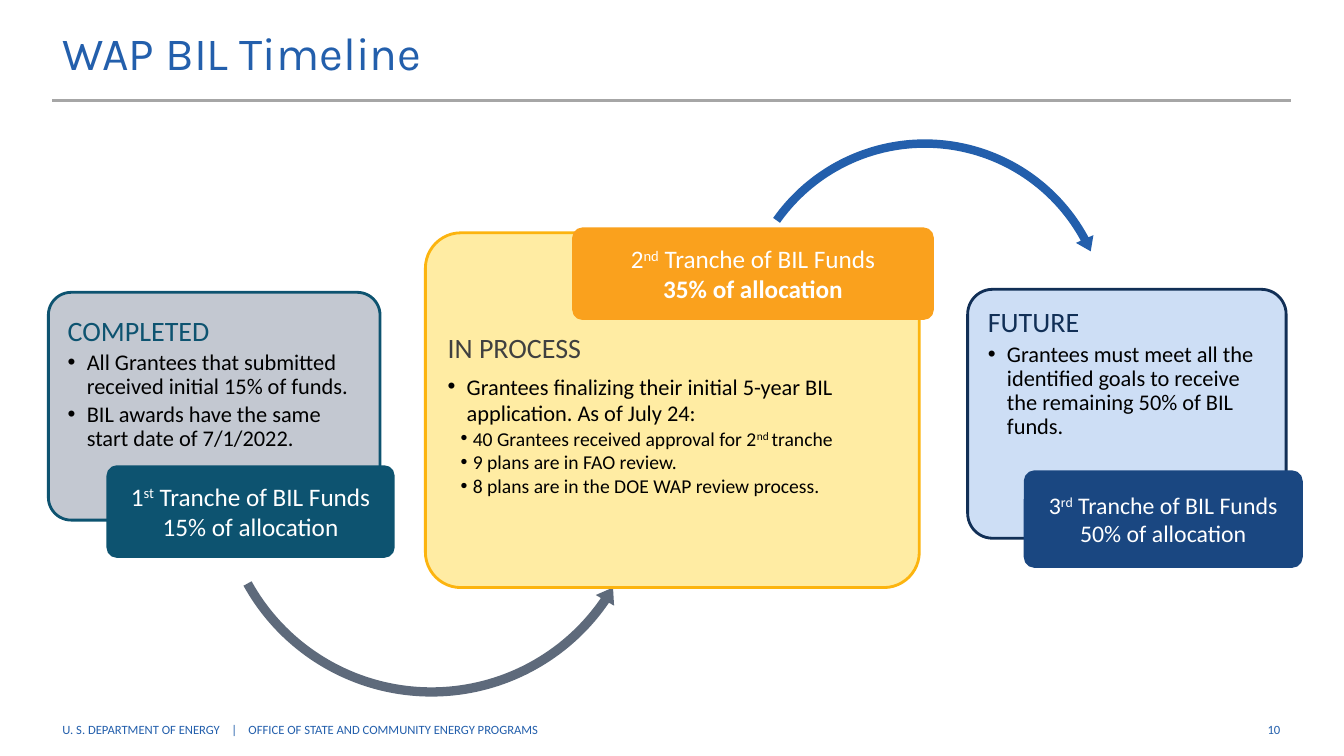
from dataclasses import dataclass

from lxml.etree import SubElement
from pptx import Presentation
from pptx.dml.color import RGBColor
from pptx.enum.shapes import MSO_CONNECTOR as Connector, MSO_SHAPE as Shape
from pptx.enum.text import MSO_ANCHOR as Anchor, PP_ALIGN as Align
from pptx.oxml.ns import qn
from pptx.util import Inches, Pt

WIDTH, HEIGHT = Inches(13.33), Inches(7.5)


@dataclass(frozen=True)
class Theme:
    title_font: str = "Karla"
    body_font: str = "Calibri"
    title_size: float = 33
    heading_size: float = 20
    body_size: float = 16
    detail_size: float = 14
    badge_size: float = 18
    small_badge_size: float = 17
    footer_size: float = 9
    blue: str = "235FAC"
    rule: str = "A6A6A6"
    slate: str = "5E6A7B"
    teal: str = "0D5370"
    silver: str = "BDC3CC"
    cream: str = "FFEA99"
    gold: str = "FCB40F"
    orange: str = "FAA11D"
    sky: str = "CDDEF5"
    navy: str = "112F56"
    royal: str = "1A4781"
    charcoal: str = "404040"
    black: str = "000000"
    white: str = "FFFFFF"


THEME = Theme()

STAGES = [
    dict(
        card=(3.6, 38.67, 24.68, 30.13), fill=THEME.silver, edge=THEME.teal, alpha=90,
        body=(3.98, 39.33, 23.85, 22.27), anchor=Anchor.BOTTOM, spacing=0.9,
        heading="COMPLETED", heading_color=THEME.teal, heading_after=3,
        bullets=["All Grantees that submitted received initial 15% of funds.",
                 "BIL awards have the same start date of 7/1/2022."],
        bullet_after=2.4, details=[],
        arrow=(Shape.LEFT_CIRCULAR_ARROW, (15.68, 34.53, 32.85, 58.4), THEME.slate,
               (0.021, 2.477, 20.613, 90.626, 0.024)),
        badge=(8.03, 61.73, 21.23, 11.87), badge_color=THEME.teal,
        tranche="1^st^ Tranche of BIL Funds", share="15% of allocation",
        badge_size=THEME.badge_size, bold_share=False,
    ),
    dict(
        card=(31.65, 30.8, 36.75, 46.93), fill=THEME.cream, edge=THEME.gold, alpha=90,
        body=(32.25, 41.87, 35.55, 34.67), anchor=Anchor.TOP, spacing=1.0,
        heading="IN PROCESS", heading_color=THEME.charcoal, heading_after=6,
        bullets=["Grantees finalizing their initial 5-year BIL application. As of July 24:"],
        bullet_after=0,
        details=["40 Grantees received approval for 2^nd ^tranche",
                 "9 plans are in FAO review.",
                 "8 plans are in the DOE WAP review process."],
        arrow=(Shape.CIRCULAR_ARROW, (54.6, 17.73, 28.43, 50.53), THEME.blue,
               (0.022, 2.602, 199.025, 129.137, 0.025)),
        badge=(42.68, 30.27, 26.7, 11.87), badge_color=THEME.orange,
        tranche="2^nd^ Tranche of BIL Funds", share="35% of allocation",
        badge_size=THEME.badge_size, bold_share=True,
    ),
    dict(
        card=(72, 38.27, 23.7, 32.93), fill=THEME.sky, edge=THEME.navy, alpha=100,
        body=(72.45, 38.93, 22.8, 24.4), anchor=Anchor.TOP, spacing=0.9,
        heading="FUTURE", heading_color=THEME.navy, heading_after=3,
        bullets=["Grantees must meet all the identified goals to receive "
                 "the remaining 50% of BIL funds."],
        bullet_after=2.4, details=[], arrow=None,
        badge=(76.28, 62.4, 20.55, 12.53), badge_color=THEME.royal,
        tranche="3^rd^ Tranche of BIL Funds", share="50% of allocation",
        badge_size=THEME.small_badge_size, bold_share=False,
    ),
]


def across(percent):
    return round(WIDTH * percent / 100)


def down(percent):
    return round(HEIGHT * percent / 100)


def place(area):
    left, top, width, height = area
    return across(left), down(top), across(width), down(height)


def write(paragraph, text, size, color, font=THEME.body_font, bold=False, align=None,
          spacing=None, after=0, bullet=None):
    paragraph.space_after = Pt(after)
    if align is not None:
        paragraph.alignment = align
    if spacing is not None:
        paragraph.line_spacing = spacing
    if bullet:
        indent, hang = bullet
        properties = paragraph._p.get_or_add_pPr()
        properties.set("marL", str(Inches(indent)))
        properties.set("indent", str(-Inches(hang)))
        SubElement(properties, qn("a:buFont")).set("typeface", "Arial")
        SubElement(properties, qn("a:buChar")).set("char", "•")
    for index, piece in enumerate(text.split("^")):
        run = paragraph.add_run()
        run.text = piece
        run.font.name, run.font.size, run.font.bold = font, Pt(size), bold
        run.font.color.rgb = RGBColor.from_string(color)
        if index % 2:
            run._r.get_or_add_rPr().set("baseline", "30000")


def set_frame(shape, anchor, inset_x=0.1, inset_y=0.05):
    frame = shape.text_frame
    frame.word_wrap = True
    frame.vertical_anchor = anchor
    frame.margin_left = frame.margin_right = Inches(inset_x)
    frame.margin_top = frame.margin_bottom = Inches(inset_y)
    return frame


def add_panel(slide, kind, area, fill, edge=None, alpha=100, adjustments=(0.1,)):
    panel = slide.shapes.add_shape(kind, *place(area))
    panel.shadow.inherit = False
    for index, value in enumerate(adjustments):
        panel.adjustments[index] = value
    panel.fill.solid()
    panel.fill.fore_color.rgb = RGBColor.from_string(fill)
    if alpha < 100:
        color = panel.fill._xPr.find(qn("a:solidFill"))[0]
        SubElement(color, qn("a:alpha")).set("val", str(alpha * 1000))
    if edge:
        panel.line.color.rgb = RGBColor.from_string(edge)
        panel.line.width = Pt(2)
    else:
        panel.line.fill.background()
    return panel


def add_body(slide, stage):
    frame = set_frame(slide.shapes.add_textbox(*place(stage["body"])),
                      stage["anchor"], 0.14, 0.14)
    spacing = stage["spacing"]
    write(frame.paragraphs[0], stage["heading"], THEME.heading_size,
          stage["heading_color"], spacing=spacing, after=stage["heading_after"])
    for bullet in stage["bullets"]:
        write(frame.add_paragraph(), bullet, THEME.body_size, THEME.black,
              spacing=spacing, after=stage["bullet_after"], bullet=(0.19, 0.19))
    for detail in stage["details"]:
        write(frame.add_paragraph(), detail, THEME.detail_size, THEME.black,
              spacing=spacing, bullet=(0.25, 0.12))


def add_badge(slide, stage):
    color, size = stage["badge_color"], stage["badge_size"]
    badge = add_panel(slide, Shape.ROUNDED_RECTANGLE, stage["badge"], color, color)
    label = set_frame(badge, Anchor.MIDDLE, 0.04, 0.03).paragraphs[0]
    write(label, stage["tranche"], size, THEME.white, align=Align.CENTER)
    label.add_line_break()
    write(label, stage["share"], size, THEME.white, align=Align.CENTER,
          bold=stage["bold_share"])


def add_stage(slide, stage):
    add_panel(slide, Shape.ROUNDED_RECTANGLE, stage["card"], stage["fill"],
              stage["edge"], stage["alpha"])
    add_body(slide, stage)
    if stage["arrow"]:
        kind, area, color, adjustments = stage["arrow"]
        add_panel(slide, kind, area, color, adjustments=adjustments)
    add_badge(slide, stage)


def add_title(slide, text):
    title = slide.shapes.title
    title.left, title.top, title.width, title.height = place((3.9, 0.93, 95.4, 11.87))
    write(set_frame(title, Anchor.MIDDLE).paragraphs[0], text, THEME.title_size,
          THEME.blue, font=THEME.title_font, align=Align.LEFT)
    rule = slide.shapes.add_connector(Connector.STRAIGHT, across(3.9), down(13.33),
                                      across(96.08), down(13.33))
    rule.line.color.rgb = RGBColor.from_string(THEME.rule)
    rule.line.width = Pt(2)
    SubElement(rule._element.spPr, qn("a:effectLst"))


def add_footer(slide, text, area, align):
    frame = set_frame(slide.shapes.add_textbox(*place(area)), Anchor.MIDDLE)
    write(frame.paragraphs[0], text, THEME.footer_size, THEME.blue, align=align)


def main():
    deck = Presentation()
    deck.slide_width, deck.slide_height = WIDTH, HEIGHT
    slide = deck.slides.add_slide(deck.slide_layouts[5])
    add_title(slide, "WAP BIL Timeline")
    add_footer(slide, "U. S. DEPARTMENT OF ENERGY    |    OFFICE OF STATE AND COMMUNITY "
               "ENERGY PROGRAMS", (3.9, 93.07, 75.5, 6.93), Align.LEFT)
    add_footer(slide, "10", (79.42, 93.07, 16.58, 6.93), Align.RIGHT)
    for stage in STAGES:
        add_stage(slide, stage)
    deck.save("out.pptx")


if __name__ == "__main__":
    main()
